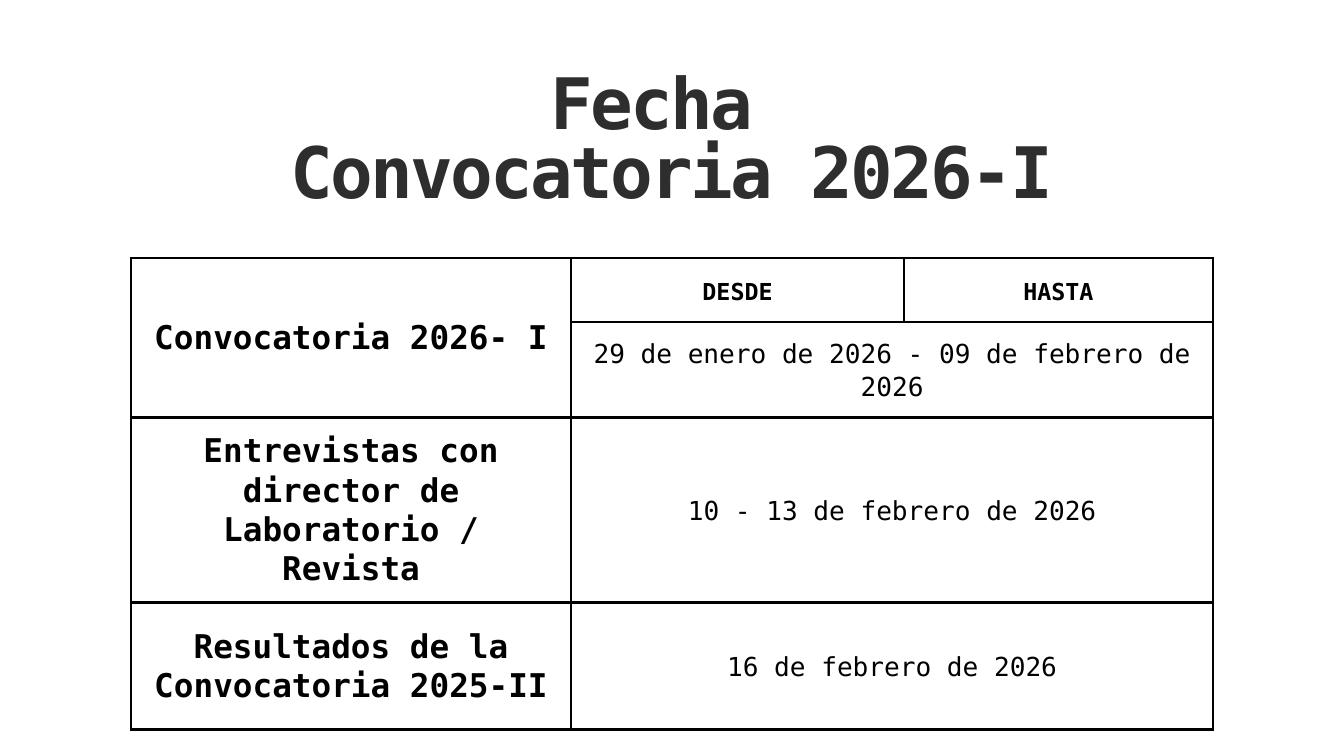
"""Builds the slide with the dates of the 2026-I call."""
from lxml import etree
from pptx import Presentation
from pptx.dml.color import RGBColor
from pptx.enum.text import MSO_ANCHOR, MSO_AUTO_SIZE, PP_ALIGN
from pptx.oxml.ns import qn
from pptx.util import Inches, Pt

CENTER = PP_ALIGN.CENTER
TOP, MIDDLE = MSO_ANCHOR.TOP, MSO_ANCHOR.MIDDLE
GROW = MSO_AUTO_SIZE.SHAPE_TO_FIT_TEXT
FONT = "DejaVu Sans Mono"
INK, BLACK, WHITE = "2E2E2E", "000000", "FFFFFF"

TITLE = ["Fecha ", "Convocatoria 2026-I"]
COLS = [6.55, 4.95, 4.6]
ROWS = [0.95, 1.42, 1.89, 1.89]
PAD = 0.21

# style: size, line spacing, bold
STYLES = {"label": (35, 42, True), "head": (25, 35, True), "date": (28, 35, False)}

# row, column, rows spanned, columns spanned, style, text
CELLS = [
    (0, 0, 2, 1, "label", "Convocatoria 2026- I"),
    (0, 1, 1, 1, "head", "DESDE"),
    (0, 2, 1, 1, "head", "HASTA"),
    (1, 1, 1, 2, "date", "29 de enero de 2026 - 09 de febrero de 2026"),
    (2, 0, 1, 1, "label", "Entrevistas con director de Laboratorio / Revista"),
    (2, 1, 1, 2, "date", "10 - 13 de febrero de 2026"),
    (3, 0, 1, 1, "label", "Resultados de la Convocatoria 2025-II"),
    (3, 1, 1, 2, "date", "16 de febrero de 2026"),
]


def rgb(color):
    return RGBColor.from_string(color)


def format_text(tf, size, spacing, bold, color):
    for p in tf.paragraphs:
        p.alignment = CENTER
        p.line_spacing = Pt(spacing)
        for r in p.runs:
            r.font.name = FONT
            r.font.size = Pt(size)
            r.font.bold = bold
            r.font.color.rgb = rgb(color)


def set_borders(cell, color, width):
    tcPr = cell._tc.get_or_add_tcPr()
    for i, side in enumerate(("a:lnL", "a:lnR", "a:lnT", "a:lnB")):
        ln = etree.Element(qn(side), w=str(Pt(width)))
        fill = etree.SubElement(ln, qn("a:solidFill"))
        etree.SubElement(fill, qn("a:srgbClr"), val=color)
        tcPr.insert(i, ln)


def add_title(slide):
    sp = slide.shapes.title
    sp.left, sp.top, sp.width, sp.height = map(Inches, (2.77, 1.12, 14.45, 2.09))
    tf = sp.text_frame
    tf.text = "\n".join(TITLE)
    tf.word_wrap = True
    tf.auto_size = GROW
    tf.vertical_anchor = TOP
    tf.margin_left = tf.margin_right = tf.margin_top = tf.margin_bottom = 0
    format_text(tf, 76, 73.7, True, INK)
    for p in tf.paragraphs:
        for r in p.runs:
            r._r.get_or_add_rPr().set("spc", "-290")


def add_dates(slide):
    table = slide.shapes.add_table(
        len(ROWS), len(COLS), Inches(1.95), Inches(3.84),
        Inches(sum(COLS)), Inches(sum(ROWS))).table
    table.first_row = table.horz_banding = False
    for column, width in zip(table.columns, COLS):
        column.width = Inches(width)
    for row, height in zip(table.rows, ROWS):
        row.height = Inches(height)
    for cell in table.iter_cells():
        cell.fill.solid()
        cell.fill.fore_color.rgb = rgb(WHITE)
        set_borders(cell, BLACK, 3)
    for row, col, row_span, col_span, style, text in CELLS:
        cell = table.cell(row, col)
        if row_span * col_span > 1:
            cell.merge(table.cell(row + row_span - 1, col + col_span - 1))
        cell.text = text
        cell.vertical_anchor = MIDDLE
        cell.margin_left = cell.margin_right = Inches(PAD)
        cell.margin_top = cell.margin_bottom = Inches(PAD)
        format_text(cell.text_frame, *STYLES[style], BLACK)


def main():
    prs = Presentation()
    prs.slide_width, prs.slide_height = Inches(20), Inches(11.25)
    slide = prs.slides.add_slide(prs.slide_layouts[5])
    add_title(slide)
    add_dates(slide)
    prs.save("out.pptx")


if __name__ == "__main__":
    main()
